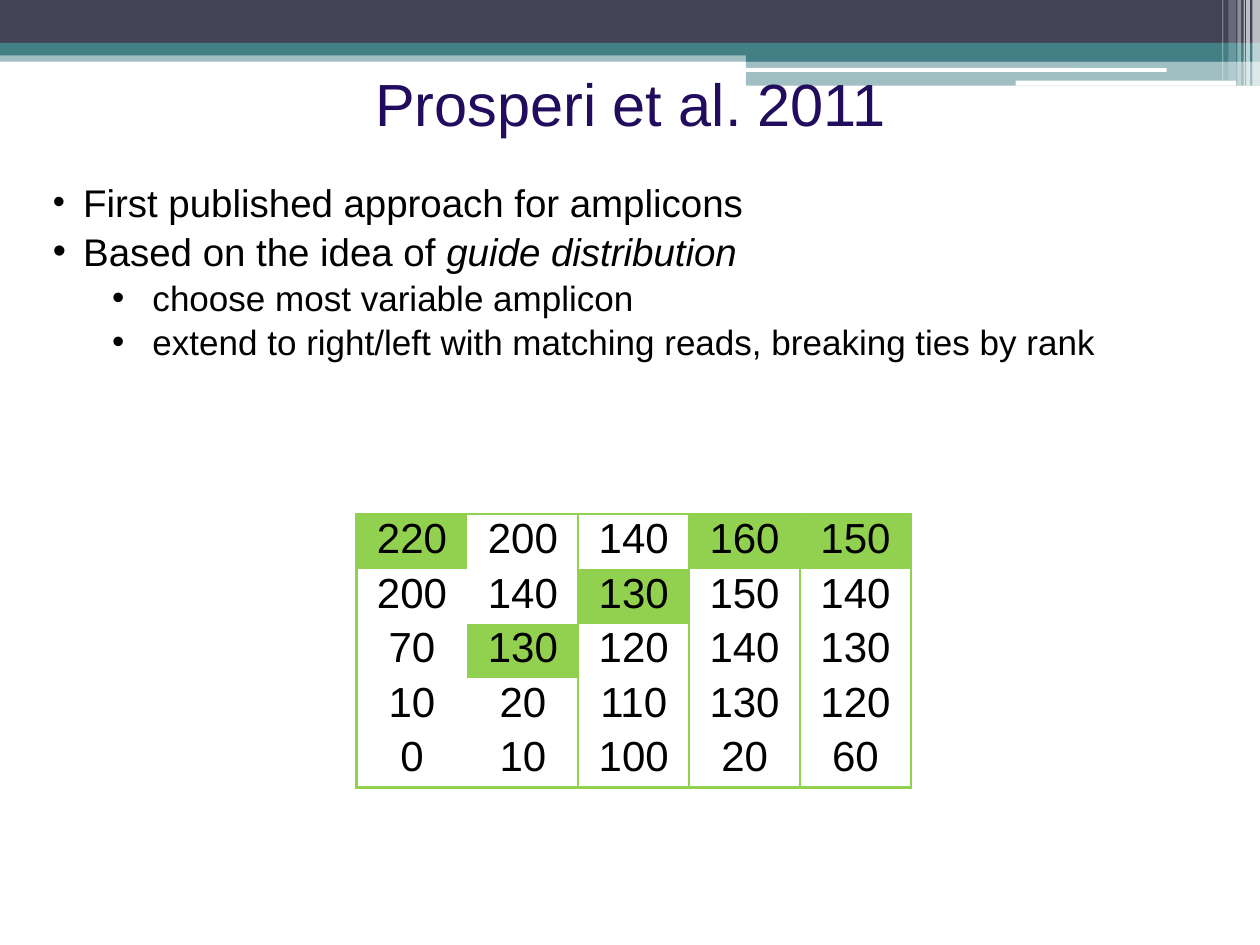
"""Build a slide on guide distributions for amplicons with a table of read counts."""
import pptx
import pptx.dml.color
import pptx.enum.shapes
import pptx.enum.text
import pptx.oxml
import pptx.oxml.ns
import pptx.util

Inches = pptx.util.Inches
Pt = pptx.util.Pt

COLORS = {"navy": "424456", "teal": "438086", "white": "FFFFFF",
          "title": "220C5E", "black": "000000", "green": "92D050"}
FONT = "Arial"

BANDS = [
    ("rect", 0, 0.4, 10, 0.09, "teal", 50),
    ("rect", 0, 0, 10, 0.34, "navy", 100),
    ("rect", 0, 0.34, 10, 0.1, "teal", 100),
    ("rect", 5.92, 0.39, 4.08, 0.1, "teal", 100),
    ("rect", 5.92, 0.48, 4.08, 0.2, "teal", 50),
    ("round", 5.91, 0.54, 3.35, 0.03, "white", 100),
    ("round", 8.06, 0.64, 1.75, 0.04, "white", 100),
    ("rect", 9.94, 0, 0.06, 0.68, "white", 65),
    ("rect", 9.89, 0, 0.03, 0.68, "white", 65),
    ("rect", 9.87, 0, 0.01, 0.68, "white", 60),
    ("rect", 9.82, 0, 0.03, 0.68, "white", 40),
    ("rect", 9.75, 0, 0.06, 0.64, "white", 20),
    ("rect", 9.7, 0, 0.01, 0.64, "white", 30),
]

TITLE = "Prosperi et al. 2011"
BULLETS = [
    {"level": 0, "before": 0, "bullet": 90, "runs": [("First published approach for amplicons", False)]},
    {"level": 0, "before": 1.5, "bullet": 98,
     "runs": [("Based on the idea of ", False), ("guide distribution", True)]},
    {"level": 1, "before": 1.5, "bullet": 100, "runs": [("choose most variable amplicon", False)]},
    {"level": 1, "before": 1, "bullet": 100,
     "runs": [("extend to right/left with matching reads, breaking ties by rank", False)]},
]
LEVELS = [{"size": 22, "margin": 0.24, "hanging": 0.24},
          {"size": 20, "margin": 0.79, "hanging": 0.32}]

READ_COUNTS = [
    [220, 200, 140, 160, 150],
    [200, 140, 130, 150, 140],
    [70, 130, 120, 140, 130],
    [10, 20, 110, 130, 120],
    [0, 10, 100, 20, 60],
]
CHOSEN = {(0, 0), (2, 1), (1, 2), (0, 3), (0, 4)}
ROW_HEIGHTS = [0.44, 0.43, 0.43, 0.43, 0.44]
COLUMN_WIDTH = 0.88


def rgb(name):
    return pptx.dml.color.RGBColor.from_string(COLORS[name])


def element(xml):
    tag, rest = xml.split(" ", 1)
    return pptx.oxml.parse_xml(f"<{tag} {pptx.oxml.ns.nsdecls('a')} {rest}")


def add_band(slide, kind, left, top, width, height, color, opacity):
    preset = pptx.enum.shapes.MSO_SHAPE
    shape = slide.shapes.add_shape(
        preset.RECTANGLE if kind == "rect" else preset.ROUNDED_RECTANGLE,
        Inches(left), Inches(top), Inches(width), Inches(height))
    shape.shadow.inherit = False
    shape.line.fill.background()
    shape.fill.solid()
    shape.fill.fore_color.rgb = rgb(color)
    if opacity < 100:
        fill_color = shape.fill._xPr.find(".//" + pptx.oxml.ns.qn("a:srgbClr"))
        fill_color.append(element(f'<a:alpha val="{opacity * 1000}"/>'[1:]))


def add_text_frame(slide, left, top, width, height):
    box = slide.shapes.add_textbox(Inches(left), Inches(top), Inches(width), Inches(height))
    frame = box.text_frame
    frame.word_wrap = True
    frame.margin_left = frame.margin_top = frame.margin_right = frame.margin_bottom = 0
    return frame


def add_run(paragraph, text, size, color="black", italic=False):
    run = paragraph.add_run()
    run.text = text
    run.font.name = FONT
    run.font.size = Pt(size)
    run.font.italic = italic
    run.font.color.rgb = rgb(color)


def add_bullets(slide):
    frame = add_text_frame(slide, 0.42, 1.42, 9.42, 1.65)
    for index, item in enumerate(BULLETS):
        paragraph = frame.add_paragraph() if index else frame.paragraphs[0]
        level = LEVELS[item["level"]]
        paragraph.level = item["level"]
        paragraph.space_before = Pt(item["before"])
        properties = paragraph._p.get_or_add_pPr()
        properties.set("marL", str(Inches(level["margin"])))
        properties.set("indent", str(-Inches(level["hanging"])))
        properties.append(element(f'a:buClr ><a:srgbClr val="{COLORS["black"]}"/></a:buClr>'))
        properties.append(element(f'a:buSzPct val="{item["bullet"] * 1000}"/>'))
        properties.append(element(f'a:buFont typeface="{FONT}"/>'))
        properties.append(element('a:buChar char="•"/>'))
        for text, italic in item["runs"]:
            add_run(paragraph, text, level["size"], italic=italic)


def set_borders(cell, row, column):
    last = len(READ_COUNTS) - 1
    drawn = {"L": column != 1, "R": column != 0, "T": row == 0, "B": row == last}
    properties = cell._tc.get_or_add_tcPr()
    for position, (side, visible) in enumerate(drawn.items()):
        fill = (f'<a:solidFill><a:srgbClr val="{COLORS["green"]}"/></a:solidFill>'
                if visible else "<a:noFill/>")
        width = Pt(1.5) if visible else 0
        properties.insert(position, element(f'a:ln{side} w="{width}">{fill}</a:ln{side}>'))


def add_count_table(slide):
    rows, columns = len(READ_COUNTS), len(READ_COUNTS[0])
    frame = slide.shapes.add_table(rows, columns, Inches(2.83), Inches(4.08),
                                   Inches(columns * COLUMN_WIDTH), Inches(sum(ROW_HEIGHTS)))
    table = frame.table
    table.first_row = table.horz_banding = False
    for column in table.columns:
        column.width = Inches(COLUMN_WIDTH)
    for row, counts in enumerate(READ_COUNTS):
        table.rows[row].height = Inches(ROW_HEIGHTS[row])
        for column, count in enumerate(counts):
            cell = table.cell(row, column)
            cell.margin_left = cell.margin_top = cell.margin_right = Inches(0.01)
            cell.margin_bottom = 0
            cell.fill.solid()
            cell.fill.fore_color.rgb = rgb("green" if (row, column) in CHOSEN else "white")
            set_borders(cell, row, column)
            paragraph = cell.text_frame.paragraphs[0]
            paragraph.alignment = pptx.enum.text.PP_ALIGN.CENTER
            add_run(paragraph, str(count), 24)


def main():
    presentation = pptx.Presentation()
    presentation.slide_width, presentation.slide_height = Inches(10), Inches(7.5)
    slide = presentation.slides.add_slide(presentation.slide_layouts[6])
    for band in BANDS:
        add_band(slide, *band)
    title = add_text_frame(slide, 0.44, 0.53, 9.13, 1.13).paragraphs[0]
    title.alignment = pptx.enum.text.PP_ALIGN.CENTER
    add_run(title, TITLE, 34, "title")
    add_bullets(slide)
    add_count_table(slide)
    presentation.save("out.pptx")


if __name__ == "__main__":
    main()
